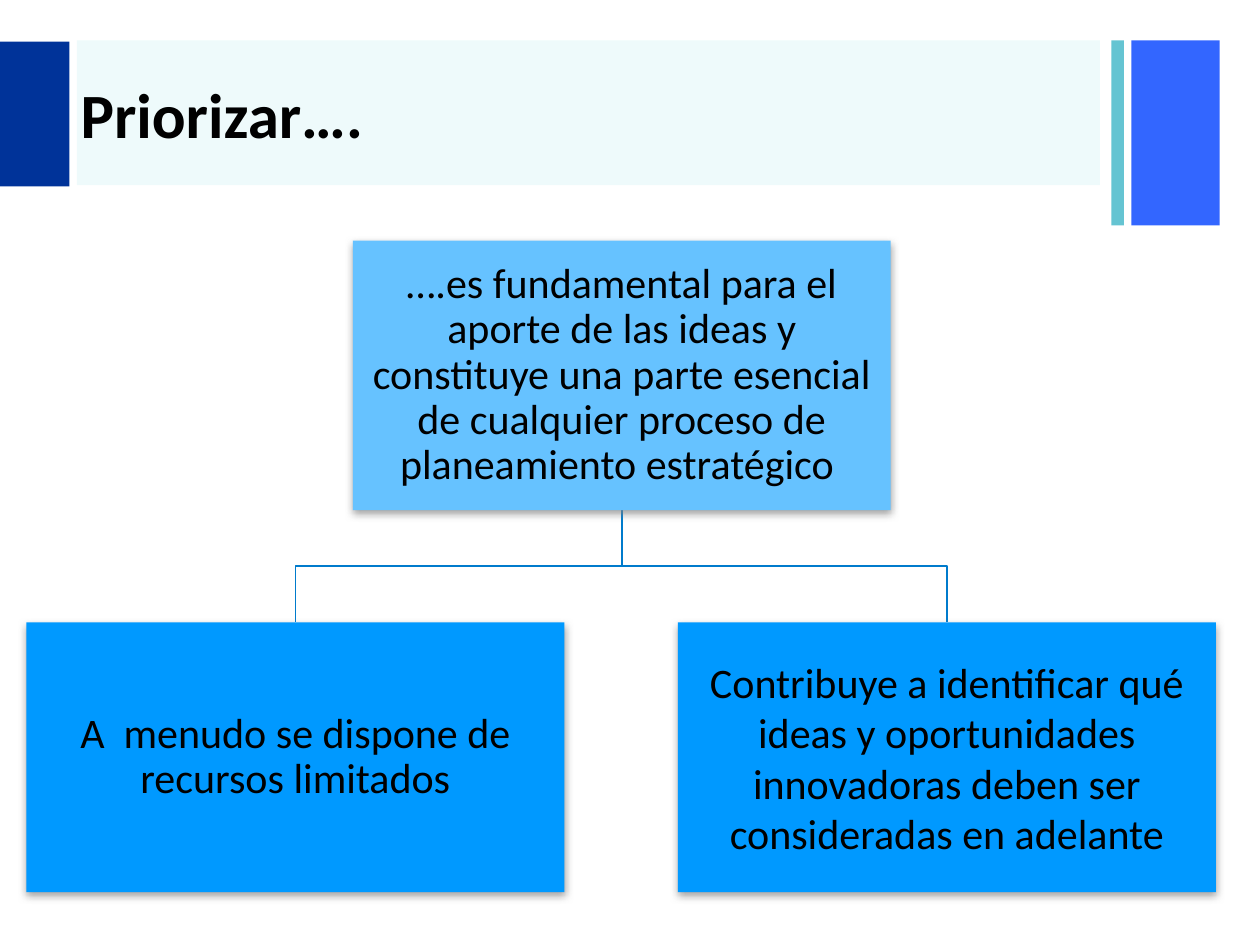
"""Build the slide on prioritising: a title band above a three-box hierarchy."""
from dataclasses import dataclass

import lxml.etree
import pptx
import pptx.dml.color
import pptx.enum.shapes
import pptx.enum.text
import pptx.oxml.ns
import pptx.util

Inches = pptx.util.Inches
FONT = "Calibri"
BOX_WIDTH, BOX_HEIGHT = 4.27, 2.14
CHILD_TOP = 4.94


@dataclass
class Band:
    left: float
    top: float
    width: float
    height: float
    color: str
    opacity: int = 100


@dataclass
class Box:
    left: float
    top: float
    color: str
    text: str
    side_inset: float = 0.02
    line_spacing: float = 0.9

    @property
    def center(self) -> float:
        return self.left + BOX_WIDTH / 2


BANDS = [
    Band(8.98, 0.32, 0.7, 1.47, "3366FF"),
    Band(8.82, 0.32, 0.1, 1.47, "65C4D2"),
    Band(0.61, 0.32, 8.12, 1.15, "14C5D0", 7),
    Band(0, 0.33, 0.55, 1.15, "003399"),
]
PARENT = Box(2.8, 1.91, "66C2FF",
             "….es fundamental para el aporte de las ideas y constituye una parte "
             "esencial de cualquier proceso de planeamiento estratégico ", 0.12)
CHILDREN = [
    Box(0.21, CHILD_TOP, "0099FF", "A  menudo se dispone de recursos limitados"),
    Box(5.38, CHILD_TOP, "0099FF",
        "Contribuye a identificar qué ideas y oportunidades innovadoras deben ser "
        "consideradas en adelante", line_spacing=1.0),
]


def rgb(color: str) -> pptx.dml.color.RGBColor:
    return pptx.dml.color.RGBColor.from_string(color)


def add_child(parent, tag: str, **attributes: str):
    return lxml.etree.SubElement(parent, pptx.oxml.ns.qn(tag), attributes)


def add_rectangle(slide, left: float, top: float, width: float, height: float, color: str):
    shape = slide.shapes.add_shape(
        pptx.enum.shapes.MSO_SHAPE.RECTANGLE,
        Inches(left), Inches(top), Inches(width), Inches(height))
    shape.shadow.inherit = False
    shape.fill.solid()
    shape.fill.fore_color.rgb = rgb(color)
    shape.line.fill.background()
    return shape


def draw_band(slide, band: Band) -> None:
    shape = add_rectangle(slide, band.left, band.top, band.width, band.height, band.color)
    if band.opacity < 100:
        color = shape.element.spPr.find(".//" + pptx.oxml.ns.qn("a:srgbClr"))
        add_child(color, "a:alpha", val=str(band.opacity * 1000))


def add_shadow(shape) -> None:
    effects = shape.element.spPr.find(pptx.oxml.ns.qn("a:effectLst"))
    shadow = add_child(effects, "a:outerShdw", blurRad=str(pptx.util.Pt(5)),
                       dist=str(pptx.util.Pt(2)), dir="5400000", rotWithShape="0")
    color = add_child(shadow, "a:srgbClr", val="808080")
    add_child(color, "a:alpha", val="75000")


def format_paragraph(paragraph, size: float, alignment, bold: bool = False) -> None:
    paragraph.alignment = alignment
    paragraph.font.name = FONT
    paragraph.font.size = pptx.util.Pt(size)
    paragraph.font.bold = bold
    paragraph.font.color.rgb = rgb("000000")


def draw_box(slide, box: Box) -> None:
    shape = add_rectangle(slide, box.left, box.top, BOX_WIDTH, BOX_HEIGHT, box.color)
    add_shadow(shape)
    frame = shape.text_frame
    frame.word_wrap = True
    frame.vertical_anchor = pptx.enum.text.MSO_ANCHOR.MIDDLE
    frame.margin_left = frame.margin_right = Inches(box.side_inset)
    frame.margin_top = frame.margin_bottom = Inches(0.02)
    frame.text = box.text
    paragraph = frame.paragraphs[0]
    format_paragraph(paragraph, 24, pptx.enum.text.PP_ALIGN.CENTER)
    paragraph.line_spacing = box.line_spacing


def draw_branch(slide, parent: Box, child: Box) -> None:
    start = parent.top + BOX_HEIGHT
    middle = (start + child.top) / 2
    builder = slide.shapes.build_freeform(Inches(parent.center), Inches(start))
    builder.add_line_segments(
        [(Inches(x), Inches(y)) for x, y in
         ((parent.center, middle), (child.center, middle), (child.center, child.top))],
        close=False)
    branch = builder.convert_to_shape()
    branch.shadow.inherit = False
    branch.fill.background()
    branch.line.color.rgb = rgb("007BCC")
    branch.line.width = pptx.util.Pt(1)


def draw_title(slide, text: str) -> None:
    title = slide.shapes.title
    title.left, title.top = Inches(0.54), Inches(0.34)
    title.width, title.height = Inches(8.27), Inches(1.12)
    title.text_frame.text = text
    title.text_frame.vertical_anchor = pptx.enum.text.MSO_ANCHOR.MIDDLE
    format_paragraph(title.text_frame.paragraphs[0], 36,
                     pptx.enum.text.PP_ALIGN.LEFT, bold=True)
    title.element.getparent().append(title.element)


def main() -> None:
    presentation = pptx.Presentation()
    presentation.slide_width, presentation.slide_height = Inches(10), Inches(7.5)
    slide = presentation.slides.add_slide(presentation.slide_layouts.get_by_name("Title Only"))
    for band in BANDS:
        draw_band(slide, band)
    for child in reversed(CHILDREN):
        draw_branch(slide, PARENT, child)
    for box in [PARENT, *CHILDREN]:
        draw_box(slide, box)
    draw_title(slide, "Priorizar….")
    presentation.save("out.pptx")


if __name__ == "__main__":
    main()
